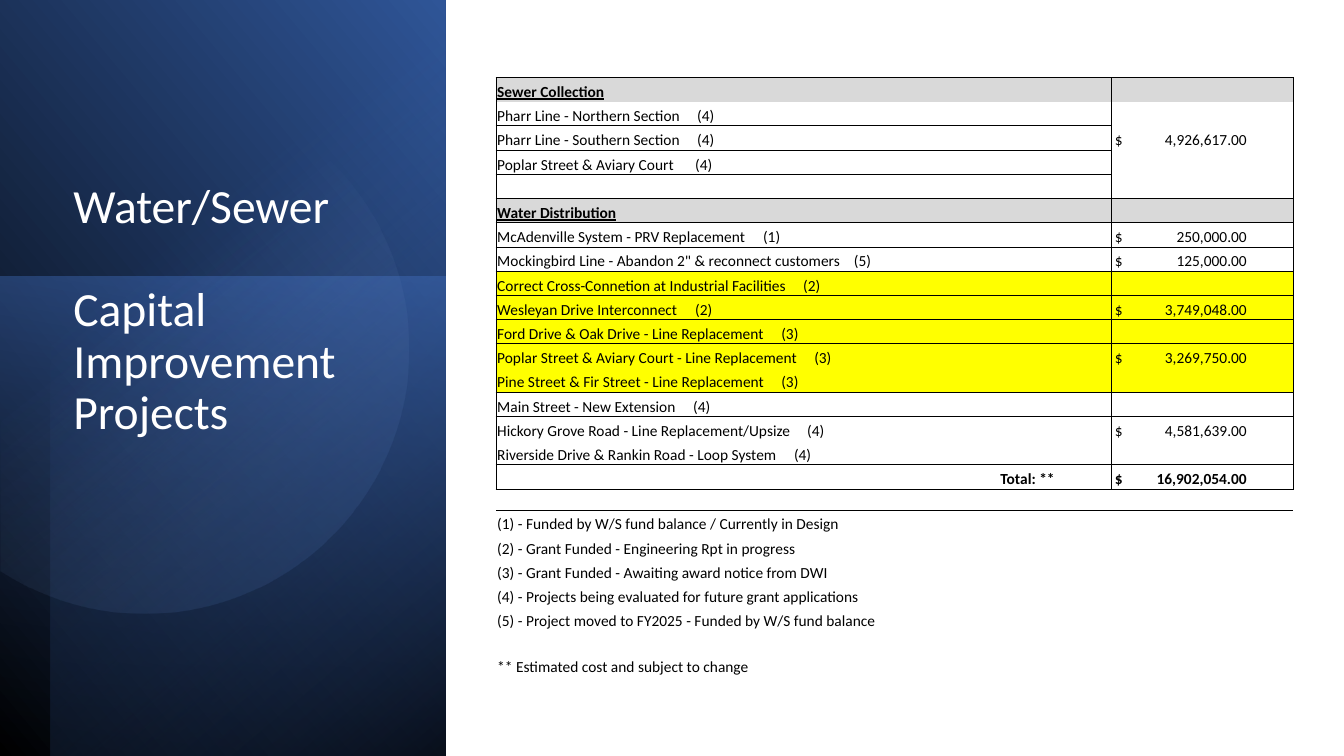
from dataclasses import dataclass
from math import cos, radians, sin

from lxml.etree import SubElement
from pptx import Presentation
from pptx.dml.color import RGBColor as Rgb
from pptx.enum.shapes import MSO_SHAPE as Preset
from pptx.enum.text import MSO_ANCHOR as Anchor, PP_ALIGN as Align
from pptx.oxml.ns import qn
from pptx.util import Cm, Pt


@dataclass(frozen=True)
class Theme:
    font: str = "Calibri"
    title_size: float = 34
    table_size: float = 11
    border_width: float = 0.5
    black: str = "000000"
    white: str = "FFFFFF"
    heading: str = "D9D9D9"
    highlight: str = "FFFF00"
    navy: str = "203864"
    deep_blue: str = "2F5597"
    blue: str = "4472C4"
    pale_blue: str = "8FAADC"


THEME = Theme()
LABEL_SPAN = 6
AMOUNT_COLUMN = 6
COLUMN_WIDTHS = [2.26] * 5 + [4.2, 4.6]
ROW_HEIGHT = 0.61
SPACER_HEIGHT = 0.53
GRAY, YELLOW = THEME.heading, THEME.highlight

PROJECTS = [
    ("Sewer Collection", None, "", GRAY, "t", "t"),
    ("Pharr Line - Northern Section\t(4)", 5.04, "", None, "b", ""),
    ("Pharr Line - Southern Section\t(4)", 5.04, "4,926,617.00", None, "tb", ""),
    ("Poplar Street & Aviary Court\t(4)", 4.99, "", None, "tb", ""),
    ("", None, "", None, "tb", "b"),
    ("Water Distribution", None, "", GRAY, "t", "t"),
    ("McAdenville System - PRV Replacement\t(1)", 6.7, "250,000.00", None, "b", "b"),
    ('Mockingbird Line - Abandon 2" & reconnect customers\t(5)', 8.99,
     "125,000.00", None, "tb", "tb"),
    ("Correct Cross-Connetion at Industrial Facilities\t(2)", 7.71, "", YELLOW, "t", "t"),
    ("Wesleyan Drive Interconnect\t(2)", 4.99, "3,749,048.00", YELLOW, "b", "b"),
    ("Ford Drive & Oak Drive - Line Replacement\t(3)", 7.16, "", YELLOW, "t", "t"),
    ("Poplar Street & Aviary Court - Line Replacement\t(3)", 7.99,
     "3,269,750.00", YELLOW, "", ""),
    ("Pine Street & Fir Street - Line Replacement\t(3)", 7.16, "", YELLOW, "b", "b"),
    ("Main Street - New Extension\t(4)", 4.94, "", None, "t", "t"),
    ("Hickory Grove Road - Line Replacement/Upsize\t(4)", 7.81,
     "4,581,639.00", None, "", ""),
    ("Riverside Drive & Rankin Road - Loop System\t(4)", 7.48, "", None, "b", "b"),
]
FUNDING_NOTES = [
    ("(1) - Funded by W/S fund balance / Currently in Design", 6),
    ("(2) - Grant Funded - Engineering Rpt in progress", 5),
    ("(3) - Grant Funded - Awaiting award notice from DWI", 6),
    ("(4) - Projects being evaluated for future grant applications", 6),
    ("(5) - Project moved to FY2025 - Funded by W/S fund balance", 6),
    ("", 1),
    ("** Estimated cost and subject to change", 4),
]


def style_gradient(shape, stops, angle):
    shape.shadow.inherit = False
    shape.line.fill.background()
    shape.fill.gradient()
    shape.fill.gradient_angle = 360 - angle
    for stop, (position, color, _) in zip(shape.fill.gradient_stops, stops):
        stop.position = position
        stop.color.rgb = Rgb.from_string(color)
    colors = shape._element.spPr.iter(qn("a:srgbClr"))
    for color, (_, _, opacity) in zip(list(colors), stops):
        SubElement(color, qn("a:alpha"), val=str(round(opacity * 100000)))


def add_panel(slide, left, top, width, height, rotation, flipped, stops, angle):
    shape = slide.shapes.add_shape(
        Preset.RECTANGLE, Cm(left), Cm(top), Cm(width), Cm(height))
    shape.rotation = rotation
    if flipped:
        shape._element.spPr.find(qn("a:xfrm")).set("flipH", "1")
    style_gradient(shape, stops, angle)


def add_clipped_disc(slide, center_x, center_y, radius, half_sweep, stops, angle):
    points = [(Cm(center_x + radius * cos(radians(turn))),
               Cm(center_y + radius * sin(radians(turn))))
              for turn in range(-half_sweep, half_sweep + 1, 3)]
    builder = slide.shapes.build_freeform(*points[0])
    builder.add_line_segments(points[1:], close=True)
    style_gradient(builder.convert_to_shape(), stops, angle)


def format_runs(paragraph, size, color, bold=False, underline=False):
    for run in paragraph.runs:
        run.font.name = THEME.font
        run.font.size = Pt(size)
        run.font.bold = bold
        run.font.underline = underline
        run.font.color.rgb = Rgb.from_string(color)


def add_title(slide, *blocks):
    box = slide.shapes.add_textbox(Cm(1.6), Cm(4.47), Cm(8), Cm(8.53))
    frame = box.text_frame
    frame.word_wrap = True
    frame.vertical_anchor = Anchor.TOP
    for index, block in enumerate(blocks):
        paragraph = frame.add_paragraph() if index else frame.paragraphs[0]
        paragraph.text = block
        paragraph.line_spacing = 0.9
        if index:
            paragraph.space_before = Pt(37)
        format_runs(paragraph, THEME.title_size, THEME.white)


def add_borders(cell, edges):
    properties = cell._tc.get_or_add_tcPr()
    for edge in "lrtb":
        if edge in edges:
            line = SubElement(properties, qn("a:ln" + edge.upper()),
                              w=str(Pt(THEME.border_width)))
            fill = SubElement(line, qn("a:solidFill"))
            SubElement(fill, qn("a:srgbClr"), val=THEME.black)


def add_tab(paragraph, position, alignment):
    tabs = SubElement(paragraph._p.get_or_add_pPr(), qn("a:tabLst"))
    SubElement(tabs, qn("a:tab"), pos=str(Cm(position)), algn=alignment)


def fill_cell(cell, text="", edges="", color=None, tab=None, tab_alignment="l",
              bold=False, underline=False, margin=0.03):
    add_borders(cell, edges)
    if color:
        cell.fill.solid()
        cell.fill.fore_color.rgb = Rgb.from_string(color)
    else:
        cell.fill.background()
    cell.vertical_anchor = Anchor.BOTTOM
    cell.margin_left = Cm(margin)
    cell.margin_right = cell.margin_top = Cm(0.03)
    cell.margin_bottom = 0
    paragraph = cell.text_frame.paragraphs[0]
    if tab:
        add_tab(paragraph, tab, tab_alignment)
    if text:
        paragraph.text = text
        format_runs(paragraph, THEME.table_size, THEME.black, bold, underline)
    else:
        SubElement(paragraph._p, qn("a:endParaRPr"), sz=str(THEME.table_size * 100))


def fill_label(table, row, span, text, edges="", sides="", **style):
    fill_cell(table.cell(row, 0), text, edges + sides, **style)
    for column in range(1, span):
        side = "r" if sides and column == span - 1 else ""
        fill_cell(table.cell(row, column), edges=edges + side, color=style.get("color"))
    if span > 1:
        table.cell(row, 0).merge(table.cell(row, span - 1))


def fill_amount(cell, amount, edges, color=None, bold=False):
    text = f"$\t{amount}" if amount else ""
    fill_cell(cell, text, edges + "lr", color, tab=3.33, tab_alignment="r",
              bold=bold, margin=0.1)


def fill_total(table, row):
    for column in range(LABEL_SPAN - 1):
        fill_cell(table.cell(row, column), edges="tb" if column else "ltb")
    total = table.cell(row, LABEL_SPAN - 1)
    fill_cell(total, "Total: **", "trb", bold=True)
    total.text_frame.paragraphs[0].alignment = Align.CENTER
    fill_amount(table.cell(row, AMOUNT_COLUMN), "16,902,054.00", "tb", bold=True)


def add_project_table(slide):
    total_row = len(PROJECTS)
    first_note = total_row + 2
    heights = [ROW_HEIGHT] * (first_note + len(FUNDING_NOTES))
    heights[total_row + 1] = heights[-2] = SPACER_HEIGHT
    table = slide.shapes.add_table(
        len(heights), len(COLUMN_WIDTHS), Cm(12.5), Cm(1.95),
        Cm(sum(COLUMN_WIDTHS)), Cm(sum(heights))).table
    table.first_row = table.horz_banding = False
    style = table._tbl.tblPr.find(qn("a:tableStyleId"))
    style.text = "{2D5ABB26-0587-4C30-8999-92F81FD0307C}"
    for column, width in zip(table.columns, COLUMN_WIDTHS):
        column.width = Cm(width)
    for row, height in zip(table.rows, heights):
        row.height = Cm(height)

    for row, (label, tab, amount, color, label_edges, amount_edges) in enumerate(PROJECTS):
        heading = color == THEME.heading
        fill_label(table, row, LABEL_SPAN, label, label_edges, "lr", color=color,
                   tab=tab, bold=heading, underline=heading)
        fill_amount(table.cell(row, AMOUNT_COLUMN), amount, amount_edges, color)
    fill_total(table, total_row)
    for column in range(len(COLUMN_WIDTHS)):
        fill_cell(table.cell(total_row + 1, column), edges="t")
    for row, (note, span) in enumerate(FUNDING_NOTES, first_note):
        fill_label(table, row, span, note)
        for column in range(span, len(COLUMN_WIDTHS)):
            fill_cell(table.cell(row, column))


def main():
    presentation = Presentation()
    presentation.slide_width, presentation.slide_height = Cm(33.87), Cm(19.05)
    slide = presentation.slides.add_slide(presentation.slide_layouts[6])
    add_panel(slide, -3.94, 3.94, 19.1, 11.23, 90, True,
              [(0, THEME.black, 1), (1, THEME.deep_blue, 1)], 310)
    add_panel(slide, -0.43, 7.39, 12.09, 11.23, 270, False,
              [(0, THEME.blue, 0.5), (1, THEME.navy, 0)], 190)
    add_panel(slide, -3.28, 4.55, 19.05, 9.96, 270, True,
              [(0, THEME.black, 0.59), (0.69, THEME.blue, 0)], 220)
    add_clipped_disc(slide, 3.63, 8.79, 6.66, 123,
                     [(0.39, THEME.pale_blue, 0), (1, THEME.deep_blue, 0.26)], 51.6)
    add_title(slide, "Water/Sewer", "Capital\vImprovement\vProjects")
    add_project_table(slide)
    presentation.save("out.pptx")


if __name__ == "__main__":
    main()
